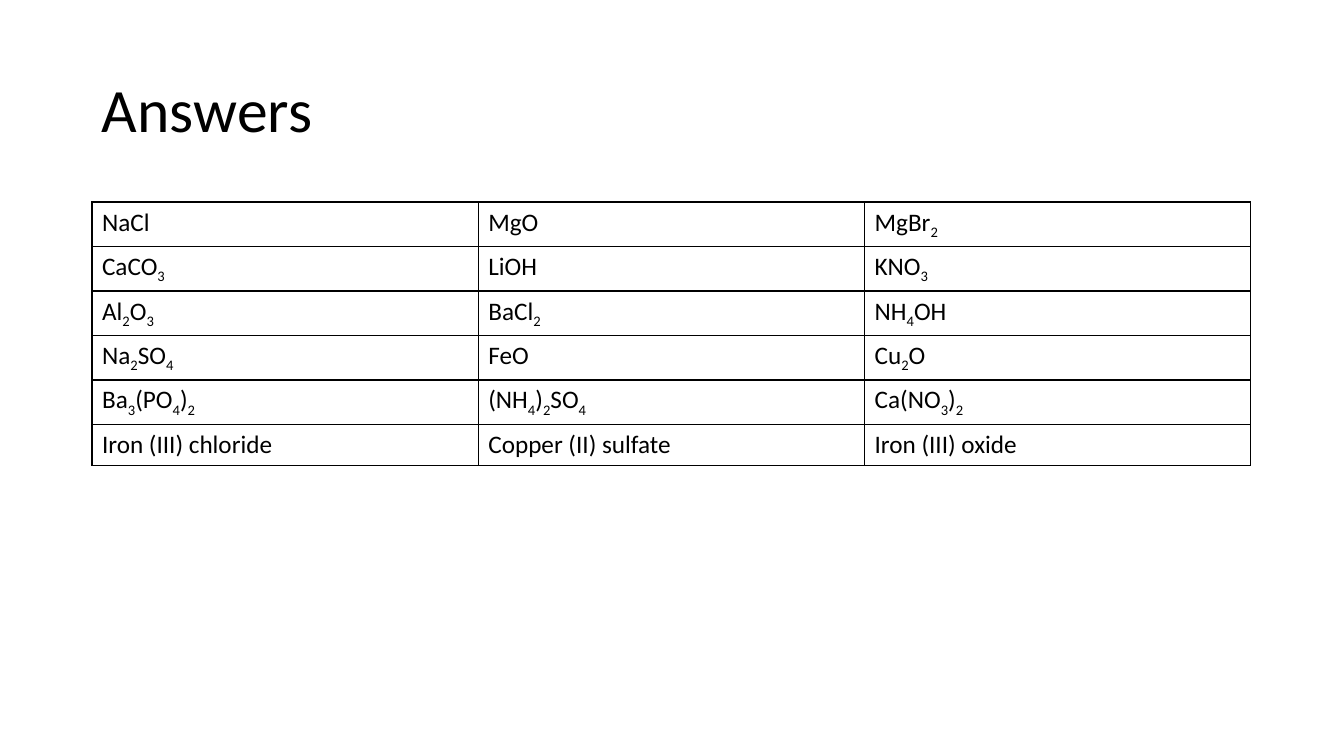
from itertools import groupby

from lxml.etree import SubElement
from pptx import Presentation
from pptx.dml.color import RGBColor
from pptx.enum.text import MSO_ANCHOR
from pptx.oxml.ns import qn
from pptx.util import Pt

SCALE = 914400 / 100.8
BLACK = "000000"
ANSWERS = [
    ["NaCl", "MgO", "MgBr2"],
    ["CaCO3", "LiOH", "KNO3"],
    ["Al2O3", "BaCl2", "NH4OH"],
    ["Na2SO4", "FeO", "Cu2O"],
    ["Ba3(PO4)2", "(NH4)2SO4", "Ca(NO3)2"],
    ["Iron (III) chloride", "Copper (II) sulfate", "Iron (III) oxide"],
]


def px(n):
    return round(n * SCALE)


def style(run, size):
    run.font.name = "Calibri"
    run.font.size = Pt(size)
    run.font.color.rgb = RGBColor.from_string(BLACK)


prs = Presentation()
prs.slide_width, prs.slide_height = px(1344), px(756)
slide = prs.slides.add_slide(prs.slide_layouts[6])

# Title
title = slide.shapes.add_textbox(px(92), px(40), px(1159), px(146))
frame = title.text_frame
frame.word_wrap = True
frame.vertical_anchor = MSO_ANCHOR.MIDDLE
frame.text = "Answers"
frame.paragraphs[0].line_spacing = 0.9
style(frame.paragraphs[0].runs[0], 44)

# Table of formulas, with every digit set as a subscript
rows, cols = len(ANSWERS), len(ANSWERS[0])
table = slide.shapes.add_table(
    rows, cols, px(92), px(202), px(1159), px(41 * rows)).table
table.first_row = table.horz_banding = False
for r, answers in enumerate(ANSWERS):
    for c, answer in enumerate(answers):
        cell = table.cell(r, c)
        para = cell.text_frame.paragraphs[0]
        for digit, chars in groupby(answer, str.isdigit):
            run = para.add_run()
            run.text = "".join(chars)
            style(run, 18)
            if digit:
                run.font._element.set("baseline", "-25000")
        props = cell._tc.get_or_add_tcPr()
        for side in ("lnL", "lnR", "lnT", "lnB"):
            line = SubElement(props, qn(f"a:{side}"), w=str(Pt(1)))
            fill = SubElement(line, qn("a:solidFill"))
            SubElement(fill, qn("a:srgbClr"), val=BLACK)
        cell.fill.background()

prs.save("out.pptx")
